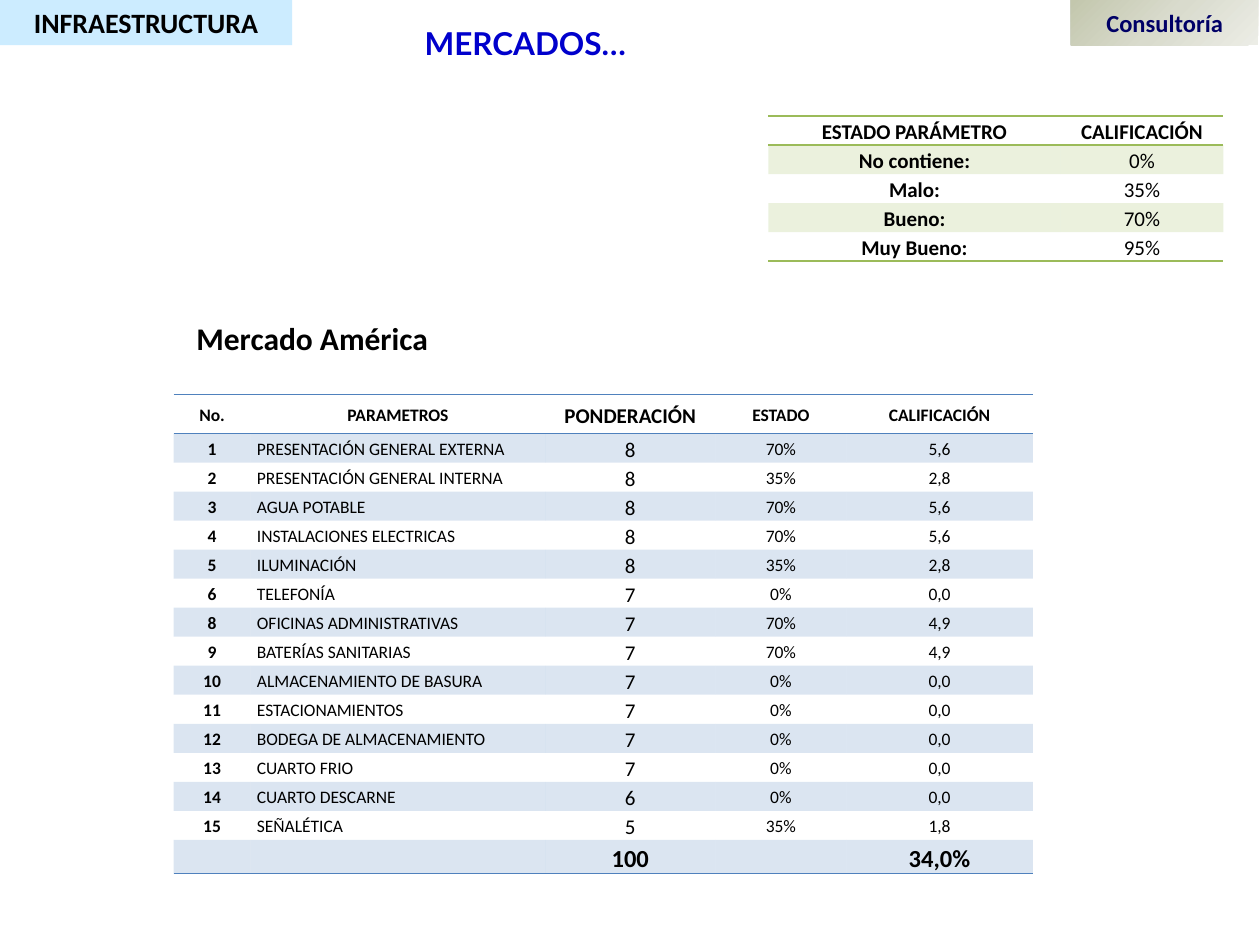
import lxml.etree
import pptx
import pptx.dml.color
import pptx.enum.shapes
import pptx.enum.text
import pptx.oxml
import pptx.oxml.ns
import pptx.util

Cm = pptx.util.Cm
Pt = pptx.util.Pt
RGBColor = pptx.dml.color.RGBColor
ALIGN = pptx.enum.text.PP_ALIGN
MIDDLE = pptx.enum.text.MSO_ANCHOR.MIDDLE
qn = pptx.oxml.ns.qn

BLACK = RGBColor(0x00, 0x00, 0x00)
TITLE_BLUE = RGBColor(0x00, 0x00, 0xCC)
NAVY = RGBColor(0x00, 0x00, 0x66)
PALE_BLUE = RGBColor(0xCC, 0xEC, 0xFF)
TABLE_BLUE = RGBColor(0x4F, 0x81, 0xBD)
TABLE_GREEN = RGBColor(0x9B, 0xBB, 0x59)
TAG_GRADIENT = (
    (0, RGBColor(0xC3, 0xC7, 0xAD)),
    (50, RGBColor(0xD9, 0xDB, 0xCD)),
    (100, RGBColor(0xEC, 0xED, 0xE6)),
)
PLAIN_TABLE_STYLE = "{2D5ABB26-0587-4C30-8999-92F81FD0307C}"

RATINGS = (
    ("ESTADO PARÁMETRO", "CALIFICACIÓN"),
    ("No contiene:", "0%"),
    ("Malo:", "35%"),
    ("Bueno:", "70%"),
    ("Muy Bueno:", "95%"),
)
PARAMETERS = (
    ("No.", "PARAMETROS", "PONDERACIÓN", "ESTADO", "CALIFICACIÓN"),
    ("1", "PRESENTACIÓN GENERAL EXTERNA", "8", "70%", "5,6"),
    ("2", "PRESENTACIÓN GENERAL INTERNA", "8", "35%", "2,8"),
    ("3", "AGUA POTABLE", "8", "70%", "5,6"),
    ("4", "INSTALACIONES ELECTRICAS", "8", "70%", "5,6"),
    ("5", "ILUMINACIÓN", "8", "35%", "2,8"),
    ("6", "TELEFONÍA", "7", "0%", "0,0"),
    ("8", "OFICINAS ADMINISTRATIVAS", "7", "70%", "4,9"),
    ("9", "BATERÍAS SANITARIAS", "7", "70%", "4,9"),
    ("10", "ALMACENAMIENTO DE BASURA", "7", "0%", "0,0"),
    ("11", "ESTACIONAMIENTOS", "7", "0%", "0,0"),
    ("12", "BODEGA DE ALMACENAMIENTO", "7", "0%", "0,0"),
    ("13", "CUARTO FRIO", "7", "0%", "0,0"),
    ("14", "CUARTO DESCARNE", "6", "0%", "0,0"),
    ("15", "SEÑALÉTICA", "5", "35%", "1,8"),
    ("", "", "100", "", "34,0%"),
)


def add_text(paragraph, text, size, color=BLACK, bold=True, font="Calibri", align=ALIGN.CENTER):
    paragraph.alignment = align
    run = paragraph.add_run()
    run.text = text
    run.font.name = font
    run.font.size = Pt(size)
    run.font.bold = bold
    run.font.color.rgb = color


def add_heading(slide, box, text, **style):
    shape = slide.shapes.add_textbox(*map(Cm, box))
    shape.text_frame.word_wrap = True
    shape.text_frame.auto_size = pptx.enum.text.MSO_AUTO_SIZE.SHAPE_TO_FIT_TEXT
    add_text(shape.text_frame.paragraphs[0], text, 18, **style)


def add_tag(slide, box, text, size, color):
    shape = slide.shapes.add_shape(pptx.enum.shapes.MSO_SHAPE.RECTANGLE, *map(Cm, box))
    shape.shadow.inherit = False
    shape.line.fill.background()
    shape.text_frame.word_wrap = True
    shape.text_frame.vertical_anchor = MIDDLE
    add_text(shape.text_frame.paragraphs[0], text, size, color)
    return shape


def fill_radial(shape, stops):
    """Fill with a gradient that spreads from the top left corner."""
    gradient = pptx.oxml.parse_xml(
        f'<a:gradFill {pptx.oxml.ns.nsdecls("a")} rotWithShape="1"><a:gsLst>'
        + "".join(
            f'<a:gs pos="{position * 1000}"><a:srgbClr val="{color}"/></a:gs>'
            for position, color in stops
        )
        + '</a:gsLst><a:path path="circle">'
        '<a:fillToRect r="100000" b="100000"/></a:path></a:gradFill>'
    )
    shape.element.spPr.find(qn("a:prstGeom")).addnext(gradient)


def add_border(cell, side, color):
    properties = cell._tc.get_or_add_tcPr()
    line = lxml.etree.SubElement(properties, qn(f"a:{side}"), w=str(Pt(1)))
    fill = lxml.etree.SubElement(line, qn("a:solidFill"))
    lxml.etree.SubElement(fill, qn("a:srgbClr"), val=str(color))


def fill_band(cell, color):
    cell.fill.solid()
    cell.fill.fore_color.rgb = color
    color_element = cell._tc.tcPr.find(".//" + qn("a:solidFill") + "[last()]/" + qn("a:srgbClr"))
    for fill in cell._tc.tcPr.findall(qn("a:solidFill")):
        color_element = fill.find(qn("a:srgbClr"))
    lxml.etree.SubElement(color_element, qn("a:alpha"), val="20000")


def add_banded_table(slide, left, top, widths, heights, rows, color, style_of):
    """style_of(row, column) gives the text style of a cell."""
    frame = slide.shapes.add_table(
        len(rows), len(widths), Cm(left), Cm(top), Cm(sum(widths)), Cm(sum(heights))
    )
    table = frame.table
    table.first_row = table.horz_banding = False
    table._tbl.tblPr.find(qn("a:tableStyleId")).text = PLAIN_TABLE_STYLE
    for column, width in zip(table.columns, widths):
        column.width = Cm(width)
    for row, height in zip(table.rows, heights):
        row.height = Cm(height)

    last = len(rows) - 1
    for i, texts in enumerate(rows):
        for j, text in enumerate(texts):
            cell = table.cell(i, j)
            cell.vertical_anchor = MIDDLE
            cell.margin_left = cell.margin_right = Cm(0.13)
            cell.margin_top = cell.margin_bottom = 0
            paragraph = cell.text_frame.paragraphs[0]
            if text:
                paragraph.line_spacing = 1.15
                add_text(paragraph, text, **style_of(i, j))
            else:
                lxml.etree.SubElement(paragraph._p, qn("a:endParaRPr"), sz="1000")
            if i == 0:
                add_border(cell, "lnT", color)
            if i in (0, last):
                add_border(cell, "lnB", color)
            if i % 2:
                fill_band(cell, color)
            else:
                cell.fill.background()


def add_ratings_table(slide, left, top):
    def style_of(row, column):
        return {"size": 12, "bold": row == 0 or column == 0}

    add_banded_table(slide, left, top, (5.89, 3.28), [0.54] * len(RATINGS),
                     RATINGS, TABLE_GREEN, style_of)


def add_parameters_table(slide, left, top):
    total_row = len(PARAMETERS) - 1

    def style_of(row, column):
        size = 14 if row == total_row else 12 if column == 2 else 10
        is_name = column == 1 and row > 0
        return {
            "size": size,
            "bold": row in (0, total_row) or column == 0,
            "align": ALIGN.LEFT if is_name else ALIGN.CENTER,
        }

    add_banded_table(slide, left, top, (1.55, 5.94, 3.43, 2.64, 3.76),
                     [0.79] + [0.54] * total_row, PARAMETERS, TABLE_BLUE, style_of)


def main():
    presentation = pptx.Presentation()
    presentation.slide_width, presentation.slide_height = Cm(25.4), Cm(19.05)
    slide = presentation.slides.add_slide(presentation.slide_layouts[6])

    add_heading(slide, (7.49, 0.36, 6.2, 1.02), "MERCADOS…", color=TITLE_BLUE, font="Lato")
    consulting = add_tag(slide, (21.59, 0, 3.78, 0.91), "Consultoría", 14, NAVY)
    fill_radial(consulting, TAG_GRADIENT)
    section = add_tag(slide, (0, 0, 5.89, 0.91), "INFRAESTRUCTURA", 16, BLACK)
    section.fill.solid()
    section.fill.fore_color.rgb = PALE_BLUE
    add_parameters_table(slide, 3.5, 7.95)
    add_ratings_table(slide, 15.49, 2.34)
    add_heading(slide, (3.5, 6.3, 5.59, 1.02), "Mercado América")

    presentation.save("out.pptx")


if __name__ == "__main__":
    main()
